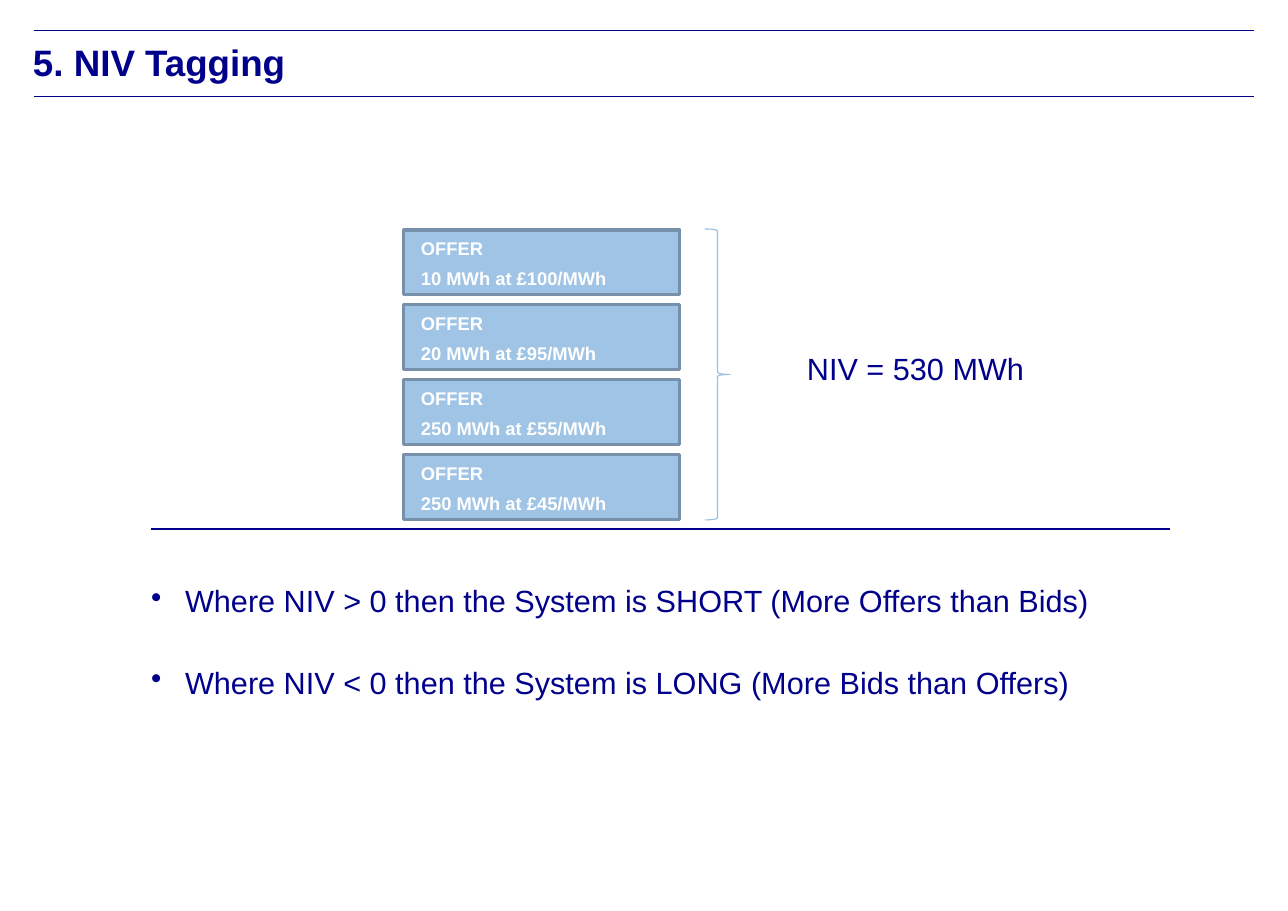
import dataclasses

import lxml.etree
import pptx
import pptx.dml.color
import pptx.enum.shapes
import pptx.enum.text
import pptx.oxml.ns
import pptx.util


def color(value):
    return pptx.dml.color.RGBColor.from_string(value)


@dataclasses.dataclass(frozen=True)
class Theme:
    font: str = "Arial"
    ink: str = "00008B"
    brace: str = "9BC0E2"
    offer_fill: str = "A0C4E5"
    offer_line: str = "7691A9"
    offer_text: str = "FFFFFF"
    title_size: int = 24
    body_size: int = 20
    offer_size: int = 12
    body_leading: int = 21
    space_after: float = 5.6


class Page:
    EMU_PER_PX = 8298

    def __init__(self, deck, theme):
        self.theme = theme
        deck.slide_width, deck.slide_height = self.px(1288), self.px(911)
        self.shapes = deck.slides.add_slide(deck.slide_layouts[6]).shapes

    def px(self, length):
        return pptx.util.Emu(length * self.EMU_PER_PX)

    def area(self, *lengths):
        return [self.px(length) for length in lengths]

    def fill_text(self, frame, lines, size, ink, bold=False, leading=None, after=0,
                  insets=(0, 0), hanging=0):
        frame.word_wrap = True
        frame.vertical_anchor = pptx.enum.text.MSO_ANCHOR.TOP
        frame.margin_left, frame.margin_top = self.area(*insets)
        frame.margin_right = frame.margin_bottom = 0
        for index, line in enumerate(lines):
            para = frame.add_paragraph() if index else frame.paragraphs[0]
            para.text = line
            para.alignment = pptx.enum.text.PP_ALIGN.LEFT
            para.space_after = pptx.util.Pt(after)
            if leading:
                para.line_spacing = pptx.util.Pt(leading)
            if hanging:
                self.add_bullet(para, hanging)
            para.font.name = self.theme.font
            para.font.size = pptx.util.Pt(size)
            para.font.bold = bold
            para.font.color.rgb = color(ink)

    def add_bullet(self, para, hanging):
        properties = para._p.get_or_add_pPr()
        properties.set("marL", str(self.px(hanging)))
        properties.set("indent", str(self.px(-hanging)))
        bullet = lxml.etree.SubElement(properties, pptx.oxml.ns.qn("a:buChar"))
        bullet.set("char", "•")

    def rule(self, left, right, top, width):
        line = self.shapes.add_connector(
            pptx.enum.shapes.MSO_CONNECTOR.STRAIGHT, *self.area(left, top, right, top))
        line.line.color.rgb = color(self.theme.ink)
        line.line.width = pptx.util.Pt(width)
        lxml.etree.SubElement(line._element.spPr, pptx.oxml.ns.qn("a:effectLst"))

    def title(self, text, *area):
        box = self.shapes.add_textbox(*self.area(*area))
        self.fill_text(box.text_frame, [text], self.theme.title_size, self.theme.ink, bold=True)

    def body(self, lines, *area, after=None, hanging=0):
        box = self.shapes.add_textbox(*self.area(*area))
        self.fill_text(box.text_frame, lines, self.theme.body_size, self.theme.ink,
                       leading=self.theme.body_leading,
                       after=after or self.theme.space_after, hanging=hanging)

    def bullets(self, lines, *area):
        gap = self.theme.body_leading + 2 * self.theme.space_after
        self.body(lines, *area, after=gap, hanging=34)

    def offer(self, volume, *area):
        box = self.shapes.add_shape(
            pptx.enum.shapes.MSO_SHAPE.RECTANGLE, *self.area(*area))
        box.shadow.inherit = False
        box.fill.solid()
        box.fill.fore_color.rgb = color(self.theme.offer_fill)
        box.line.color.rgb = color(self.theme.offer_line)
        box.line.width = pptx.util.Pt(2)
        self.fill_text(box.text_frame, ["OFFER", volume], self.theme.offer_size,
                       self.theme.offer_text, bold=True, after=self.theme.space_after,
                       insets=(17, 7))

    def brace(self, *area):
        brace = self.shapes.add_shape(
            pptx.enum.shapes.MSO_SHAPE.RIGHT_BRACE, *self.area(*area))
        brace.shadow.inherit = False
        brace.fill.background()
        brace.line.color.rgb = color(self.theme.brace)
        brace.line.width = pptx.util.Pt(0.75)
        brace.adjustments[0], brace.adjustments[1] = 0.08, 0.5


def main():
    deck = pptx.Presentation()
    page = Page(deck, Theme())

    for top in (30, 96):
        page.rule(34, 1254, top, 0.5)
    page.title("5. NIV Tagging", 33, 40, 1221, 56)

    offers = ["10 MWh at £100/MWh", "20 MWh at £95/MWh",
              "250 MWh at £55/MWh", "250 MWh at £45/MWh"]
    for row, volume in enumerate(offers):
        page.offer(volume, 404, 230 + 75 * row, 276, 65)
    page.brace(705, 229, 25, 291)
    page.body(["NIV = 530 MWh"], 807, 355, 227, 32)
    page.rule(151, 1170, 529, 1)

    page.bullets(["Where NIV > 0 then the System is SHORT (More Offers than Bids)",
                  "Where NIV < 0 then the System is LONG (More Bids than Offers)"],
                 151, 587, 1020, 158)
    deck.save("out.pptx")


if __name__ == "__main__":
    main()
